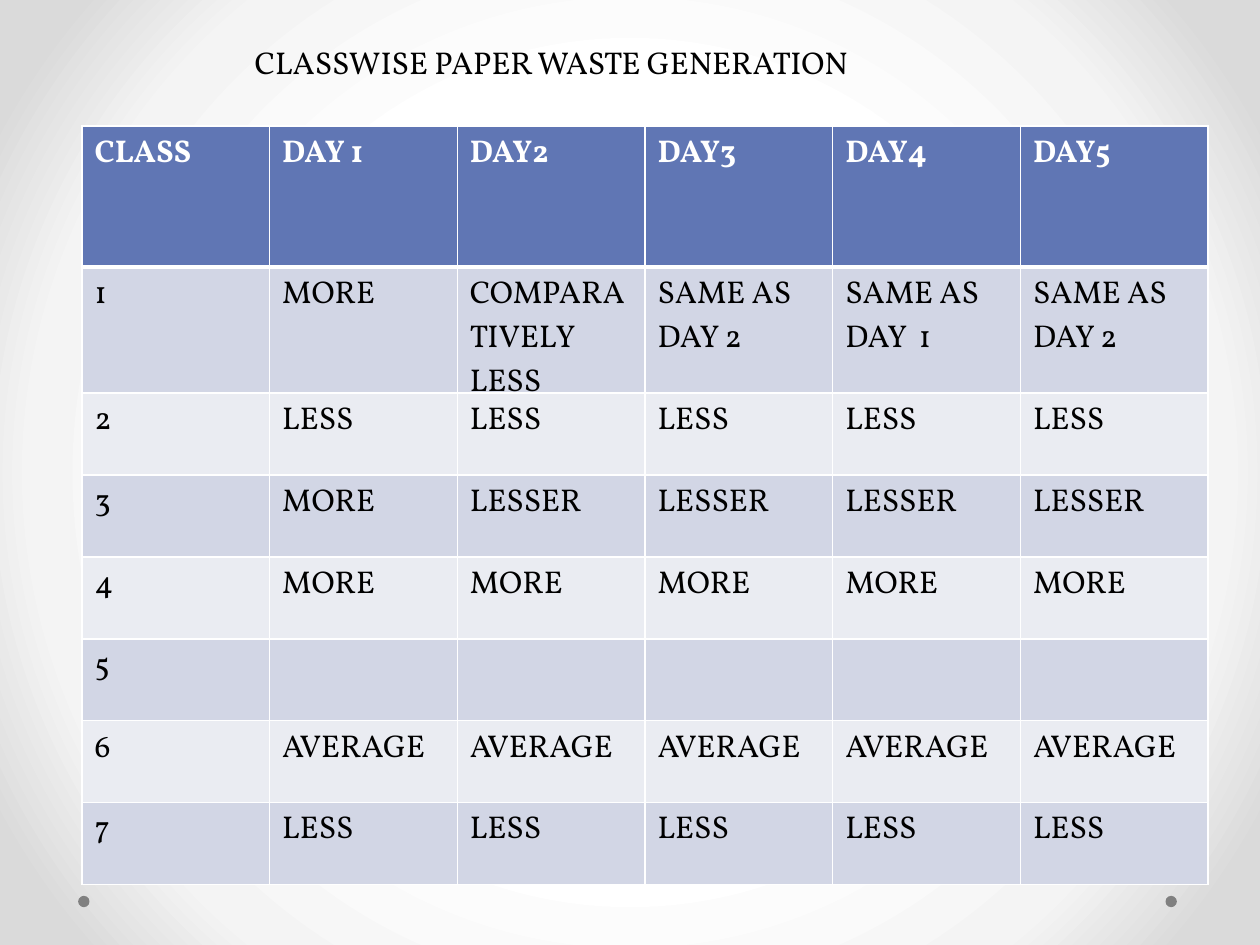
from pptx import Presentation
from pptx import util as u
from pptx.dml.color import RGBColor
from pptx.enum import shapes, text
from pptx.oxml import parse_xml
from pptx.oxml.ns import nsdecls

FONT = "Vollkorn"
WHITE, BLACK, DOT_GREY = "FFFFFF", "000000", "808080"
HEADER_FILL, BANDS = "6076B4", ("D2D6E5", "EAECF2")
BACKGROUND_STOPS = ((50, WHITE), (76, "F4F4F4"), (92, "DADADA"))

DAYS = 5
HEADER = ["CLASS", "DAY 1", "DAY2", "DAY3", "DAY4", "DAY5"]
WASTE = [
    ["MORE", "COMPARATIVELY LESS", "SAME AS DAY 2", "SAME AS DAY  1", "SAME AS DAY 2"],
    ["LESS"] * DAYS,
    ["MORE"] + ["LESSER"] * (DAYS - 1),
    ["MORE"] * DAYS,
    [""] * DAYS,
    ["AVERAGE"] * DAYS,
    ["LESS"] * DAYS,
]


def color(value):
    return RGBColor.from_string(value)


def write(frame, words, size=18, ink=BLACK, bold=False):
    para = frame.paragraphs[0]
    para.alignment = text.PP_ALIGN.LEFT
    span = para.add_run()
    span.text = words
    span.font.name, span.font.size = FONT, u.Pt(size)
    span.font.bold, span.font.color.rgb = bold, color(ink)


def paint_background(page):
    """Radial gradient, lightest in the middle."""
    stops = "".join(
        f'<a:gs pos="{share * 1000}"><a:srgbClr val="{value}"/></a:gs>'
        for share, value in BACKGROUND_STOPS)
    page.element.cSld.insert(0, parse_xml(
        f'<p:bg {nsdecls("p", "a")}><p:bgPr><a:gradFill rotWithShape="1">'
        f'<a:gsLst>{stops}</a:gsLst><a:path path="circle">'
        '<a:fillToRect l="50000" t="50000" r="50000" b="50000"/></a:path>'
        '</a:gradFill><a:effectLst/></p:bgPr></p:bg>'))


def add_dot(page, left, top, size=0.09):
    dot = page.shapes.add_shape(
        shapes.MSO_SHAPE.OVAL, *map(u.Inches, (left, top, size, size)))
    dot.shadow.inherit = False
    dot.fill.solid()
    dot.fill.fore_color.rgb = color(DOT_GREY)
    dot.line.fill.background()


def place_title(page, words):
    box = page.shapes.title
    box.left, box.top, box.width, box.height = map(u.Inches, (1.92, 0.29, 5.67, 0.4))
    box.text_frame.word_wrap = True
    box.text_frame.vertical_anchor = text.MSO_ANCHOR.TOP
    box.text_frame.auto_size = text.MSO_AUTO_SIZE.SHAPE_TO_FIT_TEXT
    write(box.text_frame, words)


def add_borders(cell, top=1, bottom=1):
    widths = {"lnL": 1, "lnR": 1, "lnT": top, "lnB": bottom}
    for place, (side, width) in enumerate(widths.items()):
        cell._tc.get_or_add_tcPr().insert(place, parse_xml(
            f'<a:{side} {nsdecls("a")} w="{u.Pt(width)}"><a:solidFill>'
            f'<a:srgbClr val="{WHITE}"/></a:solidFill></a:{side}>'))


def add_waste_table(page):
    rows = [HEADER] + [[str(n), *days] for n, days in enumerate(WASTE, 1)]
    left, top, width, height = map(u.Inches, (0.65, 1, 8.94, 6.02))
    holder = page.shapes.add_table(len(rows), len(HEADER), left, top, width, height)
    table = holder.table
    for r, words in enumerate(rows):
        header = r == 0
        table.rows[r].height = u.Inches(1.12 if header else 0.65)
        for c, word in enumerate(words):
            cell = table.cell(r, c)
            cell.fill.solid()
            cell.fill.fore_color.rgb = color(HEADER_FILL if header else BANDS[(r - 1) % 2])
            add_borders(cell, top=3 if r == 1 else 1, bottom=3 if header else 1)
            if word:
                write(cell.text_frame, word, ink=WHITE if header else BLACK, bold=header)
    # Row heights reset the frame, which leaves room for the tall first class
    holder.height = height


def main():
    deck = Presentation()
    deck.slide_width, deck.slide_height = u.Inches(10), u.Inches(7.5)
    page = deck.slides.add_slide(deck.slide_layouts[5])  # title only
    paint_background(page)
    for left in (9.25, 0.62):
        add_dot(page, left, 7.11)
    place_title(page, "CLASSWISE PAPER WASTE GENERATION")
    add_waste_table(page)
    deck.save("out.pptx")


if __name__ == "__main__":
    main()
